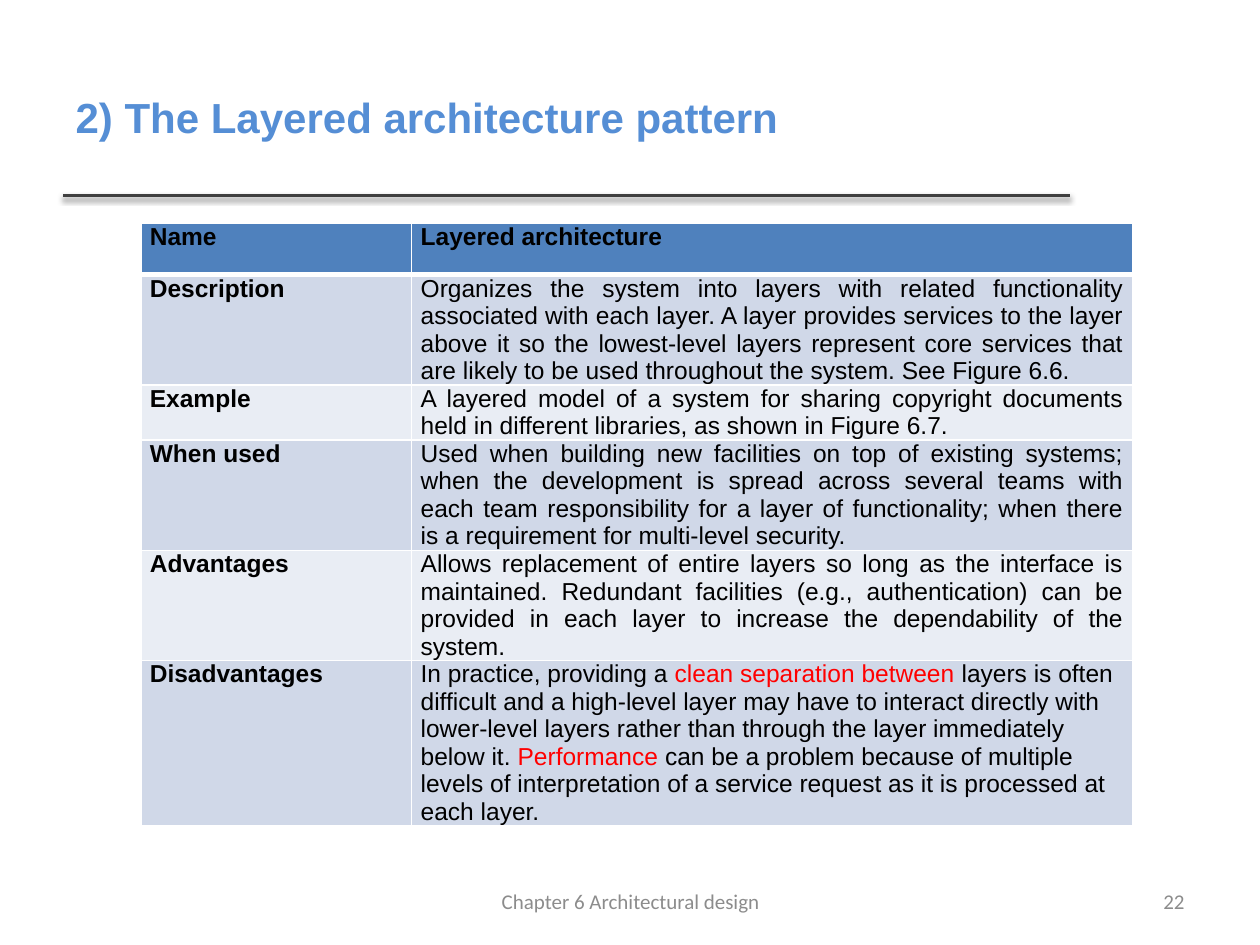
import pptx
import pptx.dml.color
import pptx.enum.shapes
import pptx.enum.text
import pptx.oxml
import pptx.oxml.ns
import pptx.util

Cm = pptx.util.Cm
Pt = pptx.util.Pt
RGBColor = pptx.dml.color.RGBColor
ALIGN = pptx.enum.text.PP_ALIGN
MIDDLE = pptx.enum.text.MSO_ANCHOR.MIDDLE
NS = pptx.oxml.ns.nsdecls("a")

TITLE_BLUE = RGBColor(0x55, 0x8E, 0xD5)
HEADER_BLUE = RGBColor(0x4F, 0x81, 0xBD)
BANDS = (RGBColor(0xE9, 0xED, 0xF4), RGBColor(0xD0, 0xD8, 0xE8))
RULE_GRAY = RGBColor(0x40, 0x40, 0x40)
FOOTER_GRAY = RGBColor(0x8C, 0x8C, 0x8C)
BLACK = RGBColor(0, 0, 0)
RED = RGBColor(0xFF, 0, 0)

TITLE_FONT = {"name": "Arial", "size": Pt(24), "bold": True}
LABEL_FONT = {"name": "Arial", "size": Pt(14), "bold": True}
BODY_FONT = {"name": "Arial", "size": Pt(14), "bold": False}
FOOTER_FONT = {"name": "Calibri", "size": Pt(12)}

# Each row: label, then text runs that alternate between black and red
ROWS = [
    ("Name", ["Layered architecture"]),
    ("Description", [
        "Organizes the system into layers with related functionality associated "
        "with each layer. A layer provides services to the layer above it so the "
        "lowest-level layers represent core services that are likely to be used "
        "throughout the system. See Figure 6.6."]),
    ("Example", [
        "A layered model of a system for sharing copyright documents held in "
        "different libraries, as shown in Figure 6.7."]),
    ("When used", [
        "Used when building new facilities on top of existing systems; when the "
        "development is spread across several teams with each team responsibility "
        "for a layer of functionality; when there is a requirement for multi-level "
        "security."]),
    ("Advantages", [
        "Allows replacement of entire layers so long as the interface is "
        "maintained. Redundant facilities (e.g., authentication) can be provided "
        "in each layer to increase the dependability of the system."]),
    ("Disadvantages", [
        "In practice, providing a ",
        "clean separation between ",
        "layers is often difficult and a high-level layer may have to interact "
        "directly with lower-level layers rather than through the layer "
        "immediately below it. ",
        "Performance",
        " can be a problem because of multiple levels of interpretation of a "
        "service request as it is processed at each layer."]),
]


def set_attrs(obj, values):
    for name, value in values.items():
        setattr(obj, name, value)


def add_run(p, text, font, color):
    r = p.add_run()
    r.text = text
    set_attrs(r.font, font)
    r.font.color.rgb = color


def set_title(s, text):
    sp = s.shapes.title
    set_attrs(sp, {"left": Cm(1.27), "top": Cm(0.76),
                   "width": Cm(20.27), "height": Cm(3.18)})
    sp.text_frame.vertical_anchor = MIDDLE
    p = sp.text_frame.paragraphs[0]
    p.alignment = ALIGN.LEFT
    add_run(p, text, TITLE_FONT, TITLE_BLUE)


def add_rule(s):
    y = Cm(3.94)
    line = s.shapes.add_connector(
        pptx.enum.shapes.MSO_CONNECTOR.STRAIGHT, Cm(1.27), y, Cm(21.56), y)
    line.line.color.rgb = RULE_GRAY
    line.line.width = Pt(2)
    # Soft shadow straight below the line
    line._element.spPr.append(pptx.oxml.parse_xml(
        f'<a:effectLst {NS}><a:outerShdw blurRad="{Pt(3.1)}" dist="{Pt(1.6)}" '
        'dir="5400000" rotWithShape="0"><a:srgbClr val="000000">'
        '<a:alpha val="38000"/></a:srgbClr></a:outerShdw></a:effectLst>'))


def set_borders(cell, top, bottom):
    tc_pr = cell._tc.get_or_add_tcPr()
    widths = {"L": 1, "R": 1, "T": top, "B": bottom}
    for i, (side, width) in enumerate(widths.items()):
        tc_pr.insert(i, pptx.oxml.parse_xml(
            f'<a:ln{side} {NS} w="{Pt(width)}"><a:solidFill>'
            f'<a:srgbClr val="FFFFFF"/></a:solidFill></a:ln{side}>'))


def fill_cell(cell, runs, font, fill, align):
    set_attrs(cell, {"margin_left": Cm(0.18), "margin_right": Cm(0.18),
                     "margin_top": 0, "margin_bottom": 0})
    cell.fill.solid()
    cell.fill.fore_color.rgb = fill
    p = cell.text_frame.paragraphs[0]
    p.alignment = align
    for i, text in enumerate(runs):
        add_run(p, text, font, RED if i % 2 else BLACK)


def add_pattern_table(s):
    widths = (Cm(5.46), Cm(14.53))
    row_height = Cm(1.04)
    table = s.shapes.add_table(len(ROWS), 2, Cm(2.84), Cm(4.5),
                               sum(widths), row_height * len(ROWS)).table
    table.horz_banding = False
    for col, width in zip(table.columns, widths):
        col.width = width
    for i, (label, runs) in enumerate(ROWS):
        fill = BANDS[i % 2] if i else HEADER_BLUE
        # Only the last description is ragged right
        align = ALIGN.LEFT if i == len(ROWS) - 1 else ALIGN.JUSTIFY
        body_font = BODY_FONT if i else LABEL_FONT
        fill_cell(table.cell(i, 0), [label], LABEL_FONT, fill, ALIGN.JUSTIFY)
        fill_cell(table.cell(i, 1), runs, body_font, fill, align)
        for cell in table.rows[i].cells:
            set_borders(cell, top=3 if i == 1 else 1, bottom=1 if i else 3)


def add_footer(s, text, left, width, align):
    tf = s.shapes.add_textbox(left, Cm(17.65), width, Cm(1.02)).text_frame
    set_attrs(tf, {"word_wrap": True, "vertical_anchor": MIDDLE})
    p = tf.paragraphs[0]
    p.alignment = align
    add_run(p, text, FOOTER_FONT, FOOTER_GRAY)


def main():
    prs = pptx.Presentation()
    set_attrs(prs, {"slide_width": Cm(25.4), "slide_height": Cm(19.05)})
    s = prs.slides.add_slide(prs.slide_layouts[5])

    # Heading
    set_title(s, "2) The Layered architecture pattern")
    add_rule(s)

    # Pattern description
    add_pattern_table(s)

    # Footer
    add_footer(s, "22", Cm(18.21), Cm(5.92), ALIGN.RIGHT)
    add_footer(s, "Chapter 6 Architectural design", Cm(8.69), Cm(8.05), ALIGN.CENTER)
    prs.save("out.pptx")


if __name__ == "__main__":
    main()
